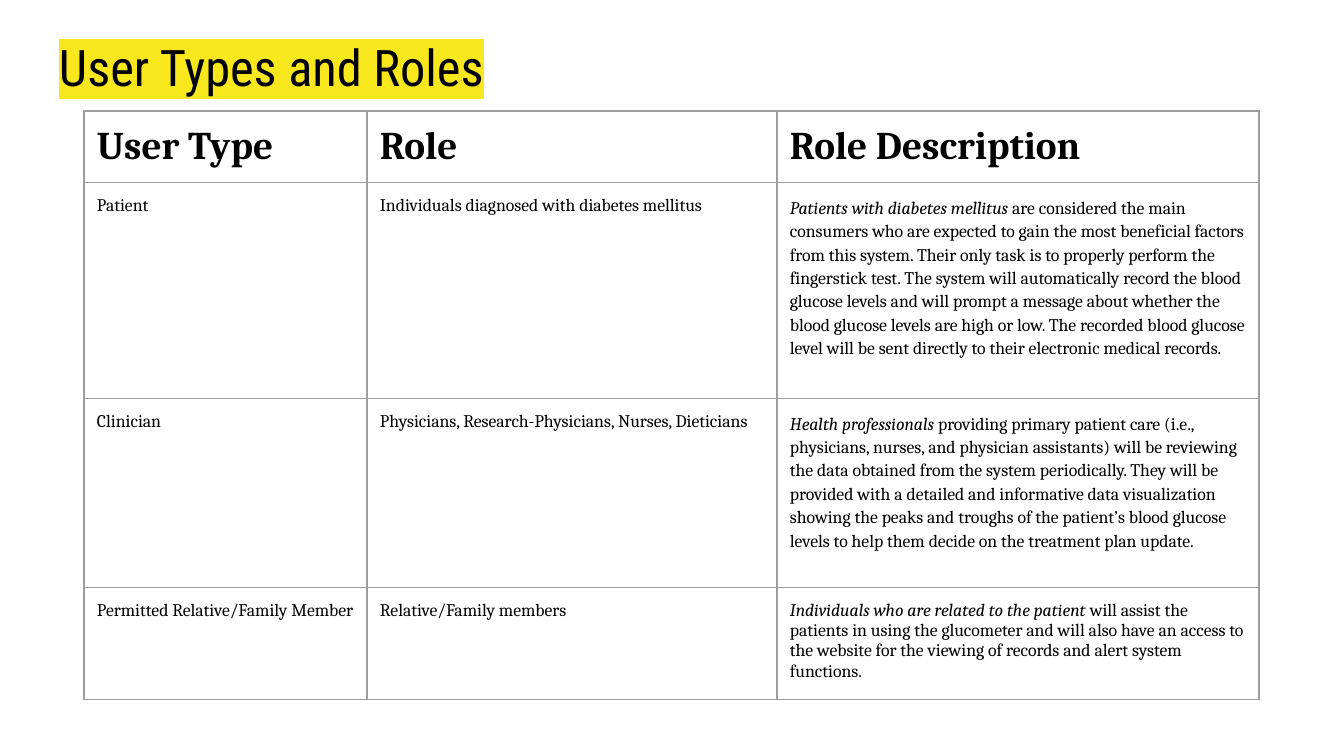
from lxml import etree
from pptx import Presentation
from pptx.dml.color import RGBColor
from pptx.enum.text import MSO_ANCHOR, PP_ALIGN
from pptx.oxml.ns import qn
from pptx.util import Pt

LEFT = PP_ALIGN.LEFT
TOP, MIDDLE = MSO_ANCHOR.TOP, MSO_ANCHOR.MIDDLE
TITLE_ONLY = 5

PX_PER_INCH = 134.4
INSET = 13
BLACK, YELLOW, GREY = "000000", "F8E71C", "9E9E9E"

COLUMN_WIDTHS = [283, 410, 482]
ROW_HEIGHTS = [58, 216, 189, 112]
HEADERS = ["User Type", "Role", "Role Description"]
# User type, role, lead-in of the description, rest of it, line spacing
USERS = [
    ("Patient", "Individuals diagnosed with diabetes mellitus",
     "Patients with diabetes mellitus",
     " are considered the main consumers who are expected to gain the most "
     "beneficial factors from this system. Their only task is to properly "
     "perform the fingerstick test. The system will automatically record the "
     "blood glucose levels and will prompt a message about whether the blood "
     "glucose levels are high or low. The recorded blood glucose level will be "
     "sent directly to their electronic medical records.", 1.15),
    ("Clinician", "Physicians, Research-Physicians, Nurses, Dieticians",
     "Health professionals",
     " providing primary patient care (i.e., physicians, nurses, and physician "
     "assistants) will be reviewing the data obtained from the system "
     "periodically. They will be provided with a detailed and informative data "
     "visualization showing the peaks and troughs of the patient’s blood "
     "glucose levels to help them decide on the treatment plan update.", 1.15),
    ("Permitted Relative/Family Member", "Relative/Family members",
     "Individuals who are related to the patient",
     " will assist the patients in using the glucometer and will also have an "
     "access to the website for the viewing of records and alert system "
     "functions.", 1.0),
]


def px(length):
    return round(length * 914400 / PX_PER_INCH)


def color(value):
    return RGBColor.from_string(value)


def set_insets(target):
    target.margin_left = target.margin_right = px(INSET)
    target.margin_top = target.margin_bottom = px(INSET)


def set_font(font, name, size, bold=False):
    font.name = name
    font.size = Pt(size)
    font.bold = bold
    font.color.rgb = color(BLACK)


def add_title(slide, text):
    title = slide.shapes.title
    title.left, title.top, title.width, title.height = map(px, (46, 19, 1253, 85))
    frame = title.text_frame
    set_insets(frame)
    frame.word_wrap = True
    frame.vertical_anchor = MIDDLE
    paragraph = frame.paragraphs[0]
    paragraph.alignment = LEFT
    paragraph.line_spacing = 1.15
    run = paragraph.add_run()
    run.text = text
    # The highlight belongs between the fill and the typeface
    run.font.color.rgb = color(BLACK)
    highlight = etree.SubElement(run.font._element, qn("a:highlight"))
    etree.SubElement(highlight, qn("a:srgbClr"), val=YELLOW)
    set_font(run.font, "Roboto Condensed", 27)


def add_borders(cell):
    properties = cell._tc.get_or_add_tcPr()
    for position, side in enumerate(("lnL", "lnR", "lnT", "lnB")):
        line = etree.Element(qn(f"a:{side}"), w=str(Pt(0.75)))
        fill = etree.SubElement(line, qn("a:solidFill"))
        etree.SubElement(fill, qn("a:srgbClr"), val=GREY)
        properties.insert(position, line)


def fill_cell(cell, parts, size, bold=False, spacing=1.0):
    """Write (text, italic) parts into one bordered cell."""
    cell.fill.background()
    add_borders(cell)
    set_insets(cell)
    cell.vertical_anchor = TOP
    paragraph = cell.text_frame.paragraphs[0]
    paragraph.alignment = LEFT
    paragraph.line_spacing = spacing
    set_font(paragraph.font, "Cambria", size, bold)
    for text, italic in parts:
        run = paragraph.add_run()
        run.text = text
        if italic:
            run.font.italic = True


def add_user_table(slide):
    frame = slide.shapes.add_table(
        len(ROW_HEIGHTS), len(COLUMN_WIDTHS), px(84), px(111),
        px(sum(COLUMN_WIDTHS)), px(sum(ROW_HEIGHTS)))
    table = frame.table
    table.first_row = table.horz_banding = False
    for column, width in zip(table.columns, COLUMN_WIDTHS):
        column.width = px(width)
    for row, height in zip(table.rows, ROW_HEIGHTS):
        row.height = px(height)

    # Header row
    for index, header in enumerate(HEADERS):
        fill_cell(table.cell(0, index), [(header, False)], 21, bold=True)

    # One row for each user type
    for row, (user, role, lead, rest, spacing) in enumerate(USERS, start=1):
        fill_cell(table.cell(row, 0), [(user, False)], 9.5)
        fill_cell(table.cell(row, 1), [(role, False)], 9.5)
        fill_cell(table.cell(row, 2), [(lead, True), (rest, False)], 9.5,
                  spacing=spacing)


def main():
    presentation = Presentation()
    presentation.slide_width, presentation.slide_height = px(1344), px(756)
    slide = presentation.slides.add_slide(presentation.slide_layouts[TITLE_ONLY])
    add_title(slide, "User Types and Roles")
    add_user_table(slide)
    presentation.save("out.pptx")


if __name__ == "__main__":
    main()
